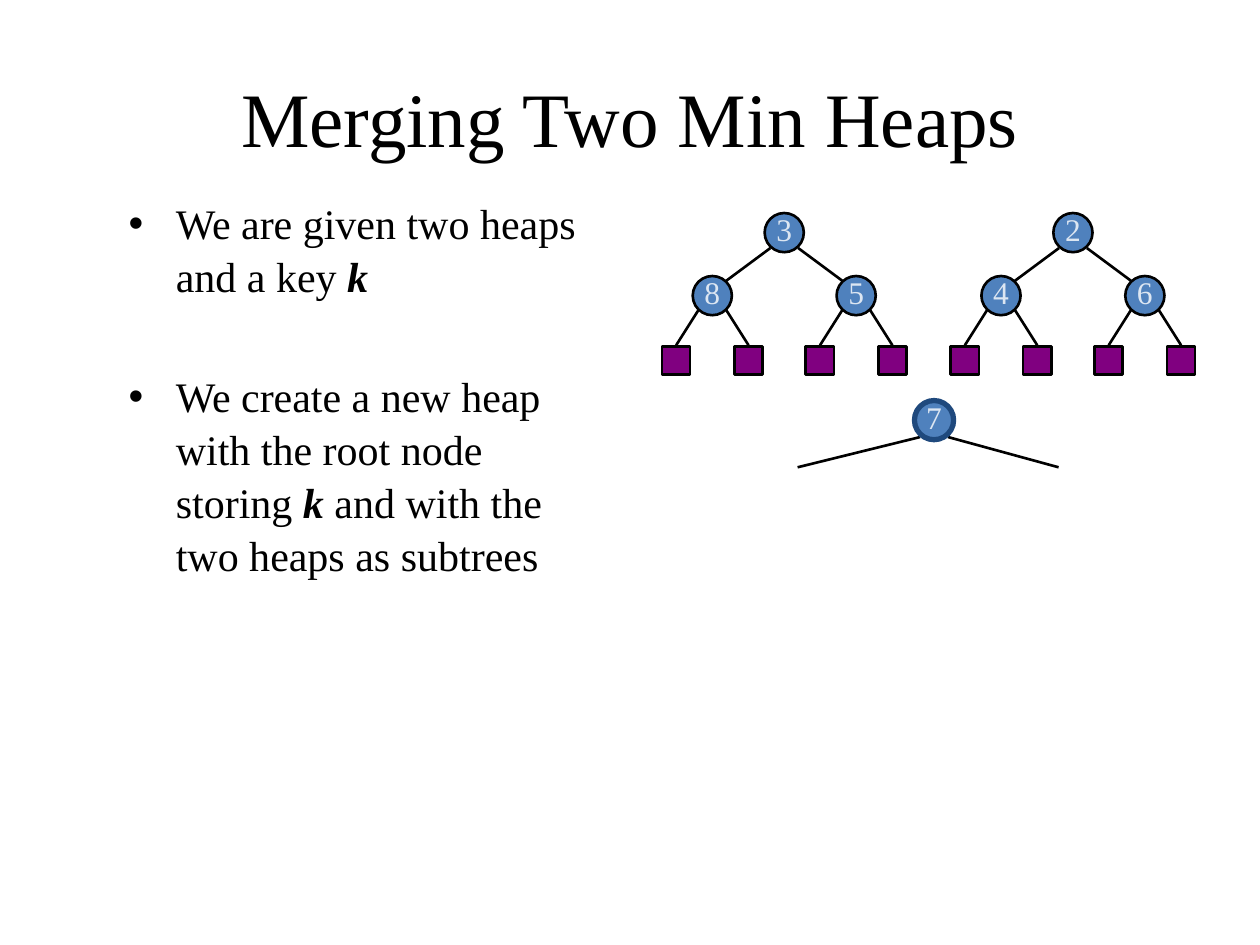
from lxml import etree
from pptx import Presentation
from pptx import util as u
from pptx.dml.color import RGBColor
from pptx.enum import shapes, text
from pptx.oxml import ns

FONT = "Times New Roman"
NODE = 0.79        # diameter of a key node, cm
LEAF = 0.57        # side of a leaf square, cm
LINK = 0.28        # sideways offset where an edge meets a node, cm


def hex_color(value):
    return RGBColor.from_string(value)


def add_span(para, words, size=24, color="000000", strong=False):
    """Append a run; strong means bold italic."""
    span = para.add_run()
    span.text = words
    span.font.name = FONT
    span.font.size = u.Pt(size)
    span.font.color.rgb = hex_color(color)
    span.font.bold = span.font.italic = strong


deck = Presentation()
deck.slide_width, deck.slide_height = u.Cm(25.4), u.Cm(19.05)
page = deck.slides.add_slide(deck.slide_layouts[1])

# Title
title = page.shapes.title
title.left, title.top, title.width, title.height = map(u.Cm, (1.27, 0.76, 22.86, 3.18))
title.text_frame.vertical_anchor = text.MSO_ANCHOR.MIDDLE
heading = title.text_frame.paragraphs[0]
heading.alignment = text.PP_ALIGN.CENTER
add_span(heading, "Merging Two Min Heaps", size=44)

# Bullet list
body = page.placeholders[1]
body.left, body.top, body.width, body.height = map(u.Cm, (2.34, 3.81, 10.16, 13.84))
frame = body.text_frame
frame.auto_size = text.MSO_AUTO_SIZE.NONE
bullets = [
    (0, [("We are given two heaps and a key ", False), ("k", True)]),
    (38.5, [("We create a new heap with the root node storing ", False), ("k", True),
            (" and with the two heaps as subtrees", False)]),
]
for index, (gap, spans) in enumerate(bullets):
    para = frame.add_paragraph() if index else frame.paragraphs[0]
    para.space_before = u.Pt(gap)
    para.line_spacing = 1.05
    properties = para._p.get_or_add_pPr()
    properties.set("marL", str(u.Cm(0.95)))
    properties.set("indent", str(-u.Cm(0.95)))
    for words, strong in spans:
        add_span(para, words, strong=strong)

# Plan the trees: nodes are (parent, key, x, y, line colour, line width) by centre
key_x, key_y = 18.83, 8.47
nodes = [(page.shapes, "7", key_x, key_y, "1F497D", 3)]
edges = [(page.shapes, key_x - LINK, 8.81, 16.08, 9.42),
         (page.shapes, key_x + LINK, 8.81, 21.34, 9.42)]
leaves = []
for root_x, keys in ((15.81, "385"), (21.63, "246")):
    heap = page.shapes.add_group_shape().shapes
    nodes.append((heap, keys[0], root_x, 4.69, "000000", 1.5))
    for side, key in zip((-1, 1), keys[1:]):
        child_x = root_x + side * 1.45
        nodes.append((heap, key, child_x, 5.96, "000000", 1.5))
        edges.append((heap, root_x + side * LINK, 5.0, child_x - side * LINK, 5.66))
        for leaf_side in (-1, 1):
            leaf_x = child_x + leaf_side * 0.73
            leaves.append((heap, leaf_x, 7.27))
            edges.append((heap, child_x + leaf_side * LINK, 6.25, leaf_x, 6.96))

# Draw the trees
for parent, *ends in edges:
    edge = parent.add_connector(shapes.MSO_CONNECTOR.STRAIGHT, *map(u.Cm, ends))
    edge.line.color.rgb = hex_color("000000")
    edge.line.width = u.Pt(1.5)
    etree.SubElement(edge._element.spPr, ns.qn("a:effectLst"))

for parent, x, y in leaves:
    leaf = parent.add_shape(shapes.MSO_SHAPE.RECTANGLE, u.Cm(x - LEAF / 2),
                            u.Cm(y - LEAF / 2), u.Cm(LEAF), u.Cm(LEAF))
    leaf.shadow.inherit = False
    leaf.fill.solid()
    leaf.fill.fore_color.rgb = hex_color("800080")
    leaf.line.color.rgb = hex_color("000000")
    leaf.line.width = u.Pt(1.5)

for parent, key, x, y, outline, width in nodes:
    node = parent.add_shape(shapes.MSO_SHAPE.OVAL, u.Cm(x - NODE / 2),
                            u.Cm(y - NODE / 2), u.Cm(NODE), u.Cm(NODE))
    node.shadow.inherit = False
    node.fill.solid()
    node.fill.fore_color.rgb = hex_color("4F81BD")
    node.line.color.rgb = hex_color(outline)
    node.line.width = u.Pt(width)
    frame = node.text_frame
    frame.word_wrap = False
    frame.vertical_anchor = text.MSO_ANCHOR.MIDDLE
    frame.margin_left = frame.margin_right = frame.margin_top = 0
    frame.margin_bottom = u.Cm(0.13)
    frame.paragraphs[0].alignment = text.PP_ALIGN.CENTER
    add_span(frame.paragraphs[0], key, size=18, color="DCE6F2")

deck.save("out.pptx")
